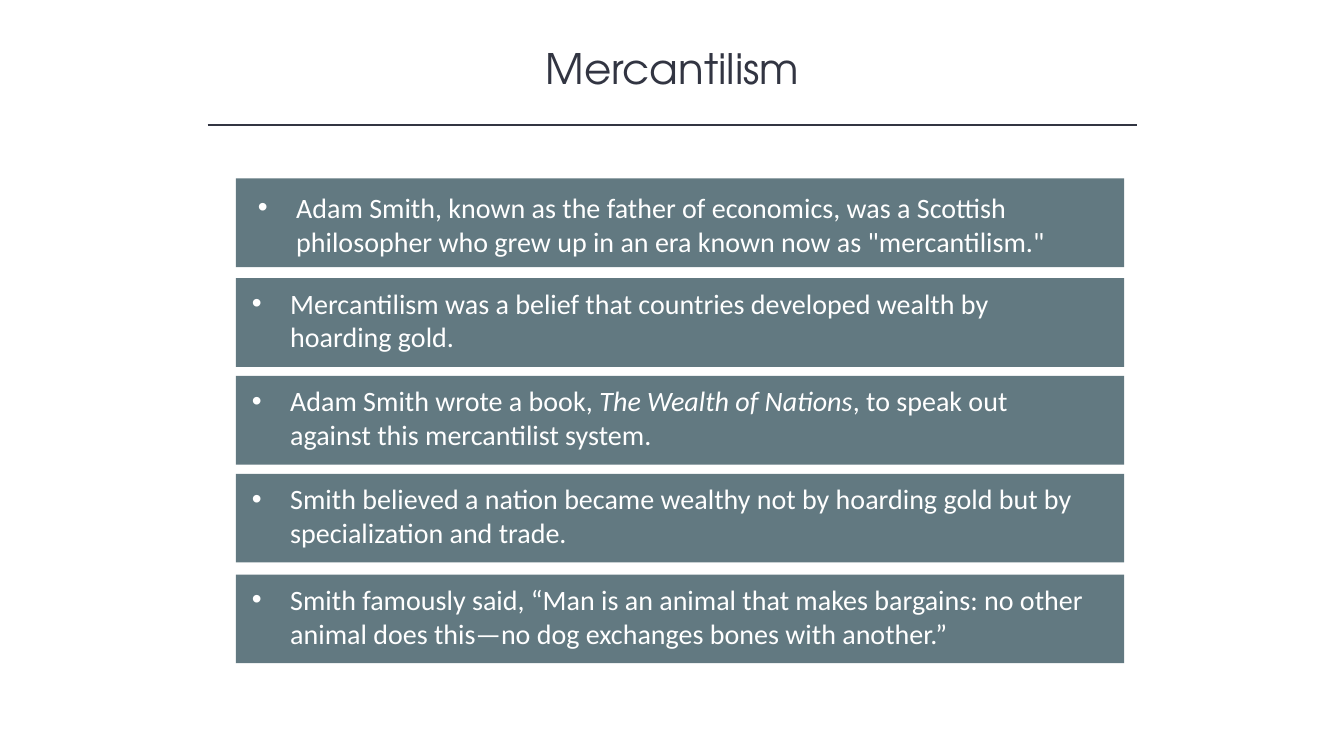
from dataclasses import dataclass

from lxml.etree import SubElement
from pptx import Presentation
from pptx.dml.color import RGBColor
from pptx.enum.shapes import MSO_CONNECTOR, MSO_SHAPE
from pptx.enum.text import MSO_ANCHOR, PP_ALIGN
from pptx.oxml.ns import qn
from pptx.util import Inches, Pt

COLOURS = {"ink": "323542", "bar": "627981", "text": "FFFFFF"}
BAR_LEFT, BAR_WIDTH, BAR_HEIGHT = 2.34, 8.81, 0.88
TEXT_WIDTH, TEXT_HEIGHT = 8.54, 0.77
BULLET_INDENT = 0.38


@dataclass
class Statement:
    top: float
    runs: list[str]  # every second run is italic
    inset_left: float = 0.06
    inset_top: float = 0.03


STATEMENTS = [
    Statement(1.77, ["Adam Smith, known as the father of economics, was a Scottish "
                     "philosopher who grew up in an era known now as \"mercantilism.\""],
              inset_left=0.12, inset_top=0.07),
    Statement(2.76, ["Mercantilism was a belief that countries developed wealth by "
                     "hoarding gold."]),
    Statement(3.73, ["Adam Smith wrote a book, ", "The Wealth of Nations",
                     ", to speak out against this mercantilist system."]),
    Statement(4.7, ["Smith believed a nation became wealthy not by hoarding gold but by "
                    "specialization and trade."]),
    Statement(5.7, ["Smith famously said, “Man is an animal that makes bargains: no other "
                    "animal does this—no dog exchanges bones with another.”"]),
]


def colour(name: str) -> RGBColor:
    return RGBColor.from_string(COLOURS[name])


def add_bar(group, left: float, top: float, width: float, height: float):
    shape = group.shapes.add_shape(MSO_SHAPE.RECTANGLE, Inches(left), Inches(top),
                                   Inches(width), Inches(height))
    shape.shadow.inherit = False
    shape.fill.solid()
    shape.fill.fore_color.rgb = colour("bar")
    shape.line.fill.background()
    return shape


def add_bullet(paragraph) -> None:
    properties = paragraph._p.get_or_add_pPr()
    properties.set("marL", str(Inches(BULLET_INDENT)))
    properties.set("indent", str(-Inches(BULLET_INDENT)))
    SubElement(properties, qn("a:buFont")).set("typeface", "Arial")
    SubElement(properties, qn("a:buChar")).set("char", "•")


def add_statement(slide, statement: Statement) -> None:
    group = slide.shapes.add_group_shape()
    add_bar(group, BAR_LEFT, statement.top, BAR_WIDTH, BAR_HEIGHT)
    text_box = add_bar(group, BAR_LEFT + statement.inset_left,
                       statement.top + statement.inset_top, TEXT_WIDTH, TEXT_HEIGHT)
    frame = text_box.text_frame
    frame.word_wrap = True
    frame.vertical_anchor = MSO_ANCHOR.TOP
    paragraph = frame.paragraphs[0]
    paragraph.alignment = PP_ALIGN.LEFT
    paragraph.font.name = "Calibri"
    paragraph.font.size = Pt(20)
    paragraph.font.color.rgb = colour("text")
    add_bullet(paragraph)
    for index, text in enumerate(statement.runs):
        run = paragraph.add_run()
        run.text = text
        if index % 2:
            run.font.italic = True


def add_title(slide, text: str) -> None:
    title = slide.shapes.title
    title.left, title.top = Inches(1.67), Inches(0.37)
    title.width, title.height = Inches(10), Inches(0.61)
    frame = title.text_frame
    frame.text = text
    frame.word_wrap = True
    frame.vertical_anchor = MSO_ANCHOR.TOP
    paragraph = frame.paragraphs[0]
    paragraph.alignment = PP_ALIGN.CENTER
    paragraph.font.name = "TeX Gyre Adventor"
    paragraph.font.size = Pt(30)
    paragraph.font.color.rgb = colour("ink")


def add_rule(slide) -> None:
    rule = slide.shapes.add_connector(MSO_CONNECTOR.STRAIGHT, Inches(2.06), Inches(1.24),
                                      Inches(11.28), Inches(1.24))
    rule.line.color.rgb = colour("ink")
    rule.line.width = Pt(1)
    SubElement(rule._element.spPr, qn("a:effectLst"))


def main() -> None:
    presentation = Presentation()
    presentation.slide_width = Inches(13.33)
    presentation.slide_height = Inches(7.5)
    slide = presentation.slides.add_slide(presentation.slide_layouts[5])

    # Heading
    add_title(slide, "Mercantilism")
    add_rule(slide)

    # Statement bars
    for statement in STATEMENTS:
        add_statement(slide, statement)

    presentation.save("out.pptx")


if __name__ == "__main__":
    main()
